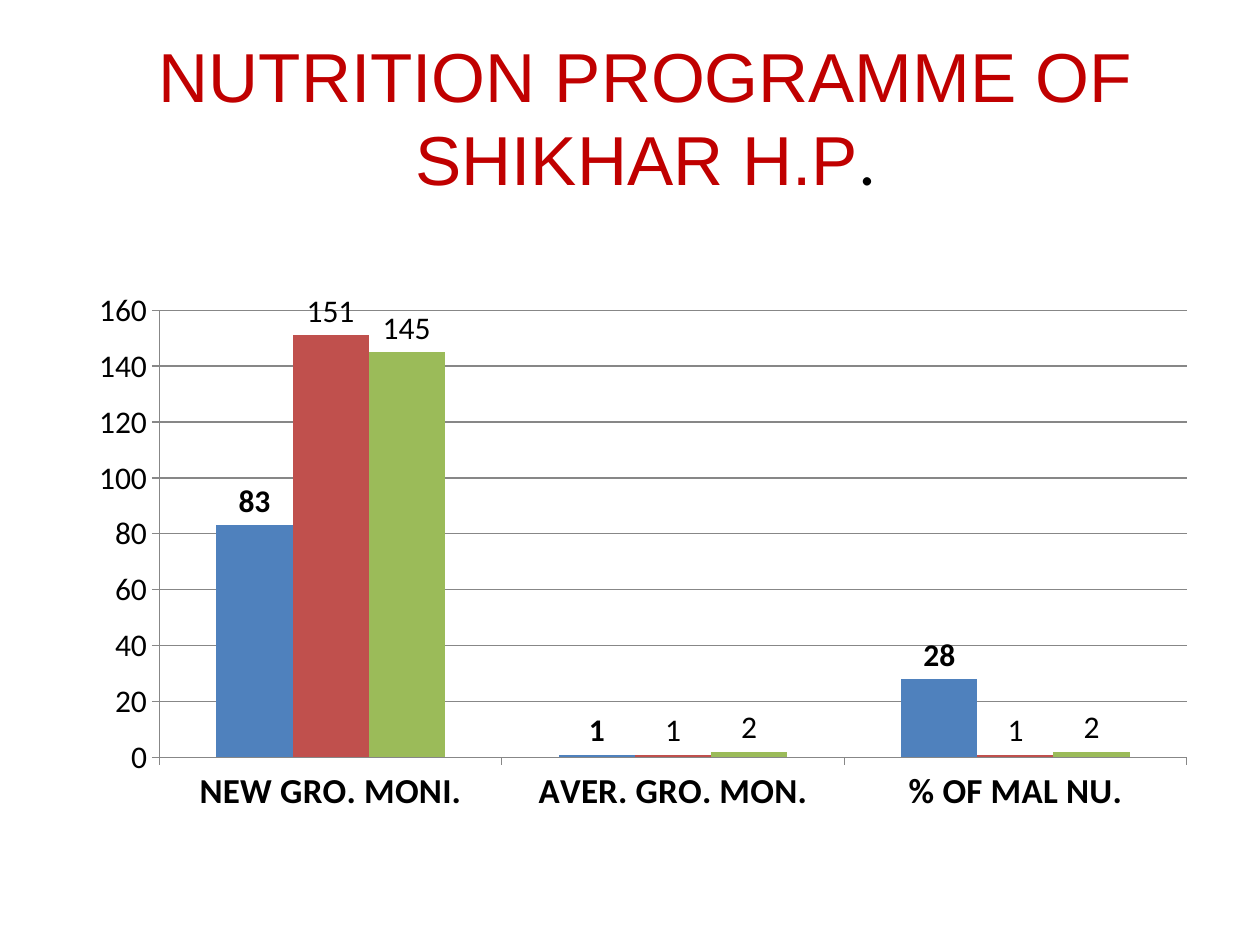
from lxml import etree
from pptx import Presentation
from pptx.chart.data import CategoryChartData
from pptx.dml.color import RGBColor
from pptx.enum.chart import XL_CHART_TYPE, XL_LABEL_POSITION, XL_TICK_MARK
from pptx.enum.text import MSO_ANCHOR, PP_ALIGN
from pptx.oxml.ns import qn
from pptx.util import Inches, Pt


def rgb(value):
    return RGBColor.from_string(value)


prs = Presentation()
prs.slide_width, prs.slide_height = Inches(10), Inches(7.5)
W, H = prs.slide_width, prs.slide_height
s = prs.slides.add_slide(prs.slide_layouts[6])

# Title
tf = s.shapes.add_textbox(int(W * 0.025), int(H * 0.04),
                          int(W * 0.975), Inches(1.25)).text_frame
tf.word_wrap = True
tf.vertical_anchor = MSO_ANCHOR.MIDDLE
p = tf.paragraphs[0]
p.alignment = PP_ALIGN.CENTER
p.font.size = Pt(39.6)
for text, font, color in [("NUTRITION PROGRAMME OF SHIKHAR H.P", "Arial", "C00000"),
                          (".", "Calibri", "000000")]:
    r = p.add_run()
    r.text = text
    r.font.size = Pt(39.6)
    r.font.name = font
    r.font.color.rgb = rgb(color)

# Column chart
series_rows = [
    ("Series 1", (83, 1, 28), "4F81BD", True),
    ("Series 2", (151, 1, 1), "C0504D", False),
    ("Series 3", (145, 2, 2), "9BBB59", False),
]
data = CategoryChartData()
data.categories = ["NEW GRO. MONI.", "AVER. GRO. MON.", "% OF MAL NU."]
for name, values, _, _ in series_rows:
    data.add_series(name, values)
chart = s.shapes.add_chart(XL_CHART_TYPE.COLUMN_CLUSTERED, int(W * 0.05), Inches(1.75),
                           int(W * 0.9), int(H * 0.66), data).chart
chart.has_legend = False
chart.has_title = False
chart.font.name = "Calibri"
chart.font.size = Pt(18)
chart.font.color.rgb = rgb("000000")

plot = chart.plots[0]
plot.vary_by_categories = False
plot.gap_width = 150
plot.overlap = 0
for series, (_, _, color, bold) in zip(plot.series, series_rows):
    series.format.fill.solid()
    series.format.fill.fore_color.rgb = rgb(color)
    labels = series.data_labels
    labels.show_value = True
    labels.position = XL_LABEL_POSITION.OUTSIDE_END
    labels.font.size = Pt(18)
    labels.font.bold = bold

cat_axis, val_axis = chart.category_axis, chart.value_axis
val_axis.minimum_scale, val_axis.maximum_scale, val_axis.major_unit = 0, 160, 20
val_axis.has_major_gridlines = True
cat_axis.tick_labels.font.size = Pt(20)
cat_axis.tick_labels.font.bold = True
for axis in (cat_axis, val_axis):
    axis.major_tick_mark = XL_TICK_MARK.OUTSIDE
for part in (cat_axis, val_axis, val_axis.major_gridlines):
    part.format.line.color.rgb = rgb("878787")
    part.format.line.width = Pt(0.75)

# Fixed inner plot area, as shares of the chart
area = chart._chartSpace.chart.plotArea
for old in area.findall(qn("c:layout")):
    area.remove(old)
layout = etree.Element(qn("c:layout"))
manual = etree.SubElement(layout, qn("c:manualLayout"))
for tag, value in [("layoutTarget", "inner"), ("xMode", "edge"), ("yMode", "edge"),
                   ("x", "0.085"), ("y", "0.144"), ("w", "0.906"), ("h", "0.717")]:
    etree.SubElement(manual, qn("c:" + tag)).set("val", value)
area.insert(0, layout)

prs.save("out.pptx")
